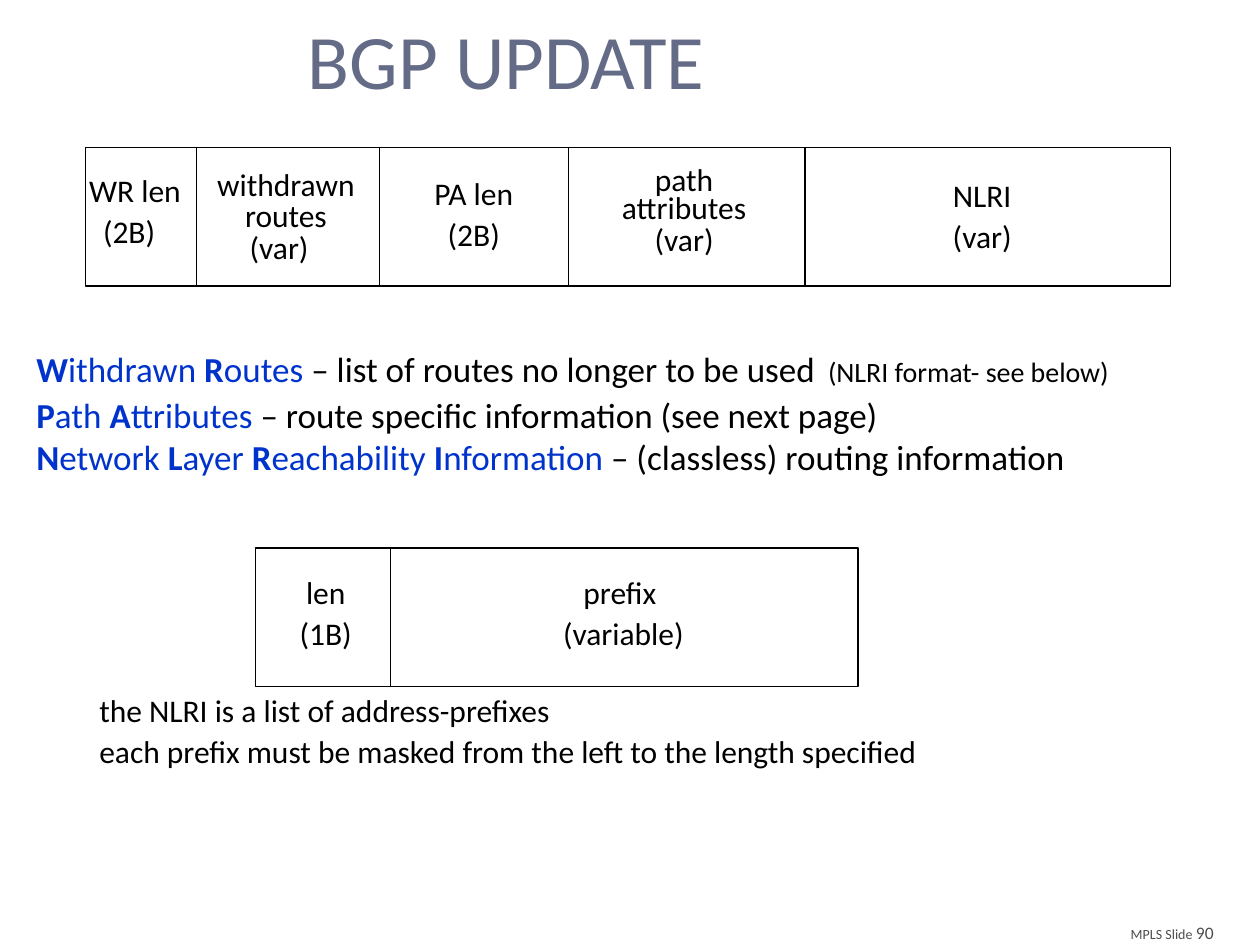
"""Build the BGP UPDATE message format slide."""
from dataclasses import dataclass
from typing import Any

from lxml import etree
from pptx import Presentation
from pptx.dml.color import RGBColor
from pptx.enum.shapes import MSO_CONNECTOR, MSO_SHAPE
from pptx.enum.text import PP_ALIGN
from pptx.oxml.ns import qn
from pptx.util import Inches, Pt

LEFT, MID, RIGHT = PP_ALIGN.LEFT, PP_ALIGN.CENTER, PP_ALIGN.RIGHT
LINE, RECT = MSO_CONNECTOR.STRAIGHT, MSO_SHAPE.RECTANGLE
BLACK = RGBColor(0x00, 0x00, 0x00)
BLUE = RGBColor(0x00, 0x33, 0xCC)
SLATE = RGBColor(0x64, 0x6B, 0x86)
GREY = RGBColor(0x4D, 0x4D, 0x4D)
FONT = "Calibri"
WIDE, HIGH = Inches(10), Inches(7.5)
COLS, ROWS = 100, 75
PAD = 0.11


@dataclass
class Line:
    """One line of a label, with its side indents in inches."""
    text: str
    left: float = 0
    right: float = 0


@dataclass
class Field:
    """One packet field: its right edge and its label."""
    edge: float
    left: float
    top: float
    width: float
    lines: list[Line]
    tight: bool = False
    align: Any = MID


@dataclass
class Packet:
    """A row of fields in one outline."""
    left: float
    top: float
    fields: list[Field]
    height: float = 11


@dataclass
class Term:
    """A defined term, its meaning and an optional aside."""
    name: str
    sense: str
    aside: str = ""


UPDATE = Packet(6.8, 11.7, [
    Field(15.6, 6.1, 13.1, 11.4, [Line("WR len"), Line("(2B)", left=PAD)], align=LEFT),
    Field(30.1, 15.4, 13.3, 14.6,
          [Line("withdrawn"), Line("routes"), Line("(var)", right=PAD)], True),
    Field(45.1, 31.2, 13.3, 12.8, [Line("PA len"), Line("(2B)")]),
    Field(63.9, 47.5, 12.9, 13.6, [Line("path attributes"), Line("(var)")], True),
    Field(92.9, 71.4, 13.5, 13.1, [Line("NLRI"), Line("(var)")]),
])
PREFIX = Packet(20.3, 43.5, [
    Field(31, 21.4, 45, 8.9, [Line("len"), Line("(1B)")]),
    Field(68.1, 42.4, 45, 13.6, [Line("prefix"), Line("(variable)", left=PAD / 2)]),
])
TERMS = [
    Term("Withdrawn Routes", "– list of routes no longer to be used",
         "(NLRI format- see below)"),
    Term("Path Attributes", "– route specific information (see next page)"),
    Term("Network Layer Reachability Information",
         "– (classless) routing information"),
]
NOTES = [
    ("the NLRI is a list of address-prefixes", 122),
    ("each prefix must be masked from the left to the length specified", 2),
]


def col(n: float) -> int:
    """Turn grid columns into a length."""
    return round(WIDE * n / COLS)


def row(n: float) -> int:
    """Turn grid rows into a length."""
    return round(HIGH * n / ROWS)


def add_run(para: Any, text: str, size: float, color: RGBColor = BLACK,
            bold: bool = False) -> None:
    """Add one styled run."""
    run = para.add_run()
    run.text = text
    font = run.font
    font.name, font.size, font.bold = FONT, Pt(size), bold
    font.color.rgb = color


def add_box(shapes: Any, left: float, top: float, width: float, height: float,
            wrap: bool = True) -> Any:
    """Add an empty text box and return its frame."""
    frame = shapes.add_textbox(col(left), row(top), col(width), row(height)).text_frame
    frame.word_wrap = wrap
    return frame


def add_para(frame: Any, index: int, align: Any = LEFT, before: float = 0,
             left: float = 0, right: float = 0) -> Any:
    """Return the paragraph at an index, adding it after the first."""
    para = frame.add_paragraph() if index else frame.paragraphs[0]
    para.alignment, para.space_before = align, Pt(before)
    props = para._p.get_or_add_pPr()
    props.set("marL", str(Inches(left)))
    props.set("marR", str(Inches(right)))
    return para


def add_label(shapes: Any, field: Field) -> None:
    """Write the label of one field."""
    frame = add_box(shapes, field.left, field.top, field.width, 8)
    for i, line in enumerate(field.lines):
        para = add_para(frame, i, field.align, 1.8, line.left, line.right)
        if field.tight:
            para.line_spacing = 0.75
        add_run(para, line.text, 18)


def add_rule(shapes: Any, x: float, top: float, end: float) -> None:
    """Draw an upright line between two fields."""
    rule = shapes.add_connector(LINE, col(x), row(top), col(x), row(end))
    rule.line.color.rgb, rule.line.width = BLACK, Pt(0.75)
    etree.SubElement(rule._element.spPr, qn("a:effectLst"))


def add_packet(shapes: Any, packet: Packet) -> None:
    """Draw a packet with its rules and labels."""
    width = packet.fields[-1].edge - packet.left
    rect = shapes.add_shape(RECT, col(packet.left), row(packet.top),
                            col(width), row(packet.height))
    rect.shadow.inherit = False
    rect.fill.background()
    rect.line.color.rgb, rect.line.width = BLACK, Pt(0.75)
    for field in packet.fields[:-1]:
        add_rule(shapes, field.edge, packet.top, packet.top + packet.height)
    for field in packet.fields:
        add_label(shapes, field)


def add_body(shapes: Any) -> None:
    """Write the terms and the notes on prefixes."""
    frame = add_box(shapes, 1.9, 25.4, 96, 46.7)
    for i, term in enumerate(TERMS):
        para = add_para(frame, i)
        for word in term.name.split():
            add_run(para, word[0], 20, BLUE, True)
            add_run(para, word[1:] + " ", 20, BLUE)
        add_run(para, term.sense, 20)
        if term.aside:
            add_run(para, " ", 32)
            add_run(para, term.aside, 16)
    for i, (text, gap) in enumerate(NOTES, len(TERMS)):
        add_run(add_para(frame, i, before=gap, left=0.5), text, 18)


def main() -> None:
    """Build and save the slide."""
    deck = Presentation()
    deck.slide_width, deck.slide_height = WIDE, HIGH
    shapes = deck.slides.add_slide(deck.slide_layouts[6]).shapes
    foot = add_para(add_box(shapes, 88.4, 72.7, 8.9, 2.7, False), 0, RIGHT)
    add_run(foot, "MPLS Slide ", 8, GREY)
    add_run(foot, "90", 10, GREY)
    title = add_box(shapes, 3.9, 0.1, 72.6, 10.9)
    title.margin_top = Inches(0.09)
    add_run(add_para(title, 0, MID), "BGP UPDATE", 44, SLATE)
    add_body(shapes)
    add_packet(shapes, UPDATE)
    add_packet(shapes.add_group_shape().shapes, PREFIX)
    deck.save("out.pptx")


if __name__ == "__main__":
    main()
